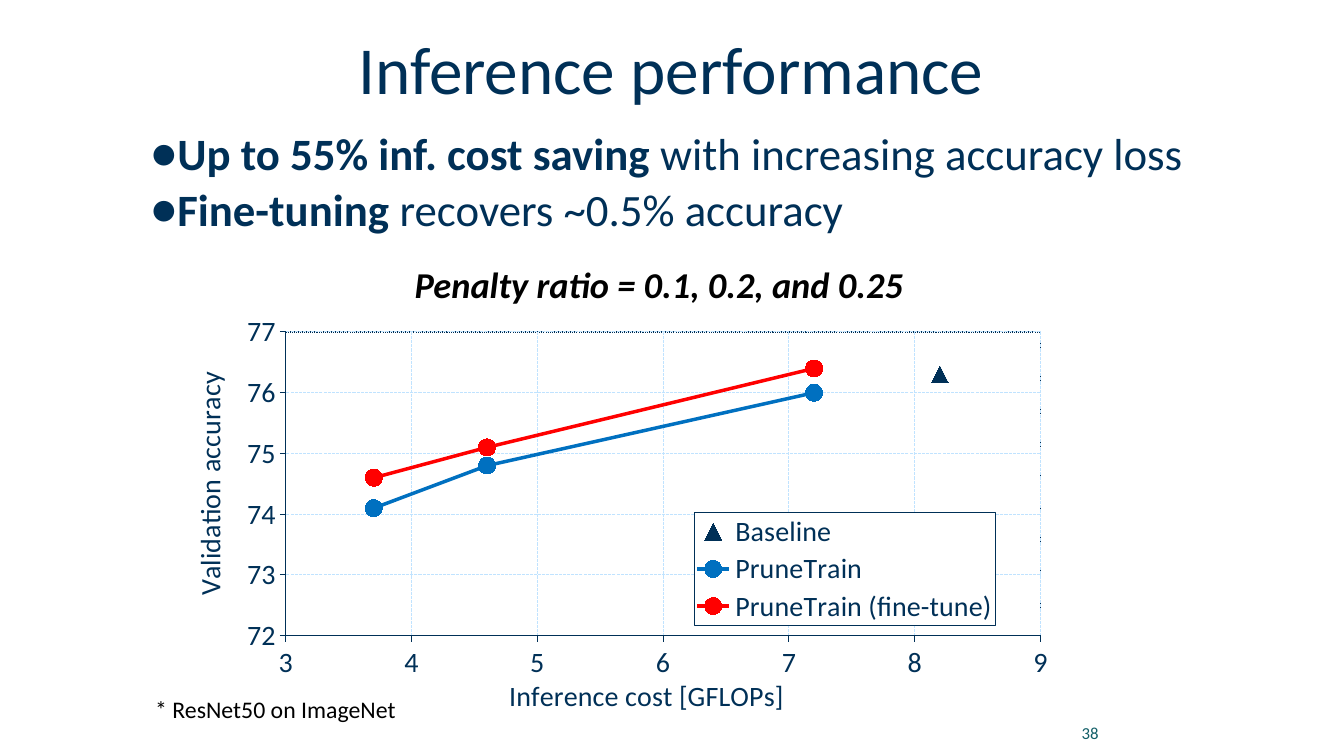
from lxml import etree
from pptx import Presentation
from pptx import util as u
from pptx.chart.data import XyChartData
from pptx.dml.color import RGBColor
from pptx.enum import chart as ec
from pptx.enum import dml, text
from pptx.oxml import parse_xml
from pptx.oxml.ns import nsdecls, qn

COLORS = {
    "navy": "003057",
    "blue": "0070C0",
    "red": "FF0000",
    "grid": "C0E3FF",
    "teal": "115E67",
    "black": "000000",
}
FONT = "Calibri"

BULLETS = [
    [("Up to 55% inf. cost saving", True), (" with increasing accuracy loss", False)],
    [("Fine-tuning ", True), ("recovers ~0.5% accuracy", False)],
]
COSTS = [8.2] + [7.2, 4.6, 3.7] * 2
SERIES = [
    ("Baseline", 0, [76.3], "navy", ec.XL_MARKER_STYLE.TRIANGLE),
    ("PruneTrain", 1, [76.0, 74.8, 74.1], "blue", ec.XL_MARKER_STYLE.CIRCLE),
    ("PruneTrain (fine-tune)", 4, [76.4, 75.1, 74.6], "red", ec.XL_MARKER_STYLE.CIRCLE),
]


def rgb(name):
    return RGBColor.from_string(COLORS[name])


def style_font(font, size, color, bold=False, italic=False):
    font.name, font.size = FONT, u.Pt(size)
    font.bold, font.italic = bold, italic
    font.color.rgb = rgb(color)


def style_line(line, color, width, dash=None):
    line.color.rgb = rgb(color)
    line.width = u.Pt(width)
    if dash:
        line.dash_style = dash


def place(shape, left, top, width, height):
    shape.left, shape.top = u.Cm(left), u.Cm(top)
    shape.width, shape.height = u.Cm(width), u.Cm(height)


def prepare_frame(frame, side, vertical, anchor=text.MSO_ANCHOR.TOP):
    frame.word_wrap = True
    frame.auto_size = text.MSO_AUTO_SIZE.NONE
    frame.vertical_anchor = anchor
    frame.margin_left = frame.margin_right = u.Cm(side)
    frame.margin_top = frame.margin_bottom = u.Cm(vertical)


def set_indent(paragraph, left, hanging=0):
    properties = paragraph._p.get_or_add_pPr()
    properties.set("marL", str(u.Cm(left)))
    properties.set("indent", str(u.Cm(hanging)))
    return properties


def add_title(slide):
    title = slide.shapes.title
    place(title, 3.25, 0.43, 27.33, 2.36)
    prepare_frame(title.text_frame, 0.25, 0.25)
    title.text_frame.text = "Inference performance"
    heading = title.text_frame.paragraphs[0]
    heading.alignment = text.PP_ALIGN.CENTER
    style_font(heading.runs[0].font, 48, "navy")


def add_bullets(slide):
    body = slide.placeholders[1]
    place(body, 3.33, 3.15, 26.87, 3.61)
    frame = body.text_frame
    prepare_frame(frame, 0.18, 0.18)
    for index, parts in enumerate(BULLETS):
        point = frame.add_paragraph() if index else frame.paragraphs[0]
        properties = set_indent(point, 0.94, -0.66)
        color = etree.SubElement(properties, qn("a:buClr"))
        etree.SubElement(color, qn("a:srgbClr")).set("val", COLORS["navy"])
        etree.SubElement(properties, qn("a:buFont")).set("typeface", FONT)
        etree.SubElement(properties, qn("a:buChar")).set("char", "●")
        point.line_spacing = 0.9
        point.space_before = u.Pt(4.9 if index else 0)
        for words, bold in parts:
            run = point.add_run()
            run.text = words
            style_font(run.font, 32, "navy", bold)


def add_label(slide, words, box, size, color, align, bold=False, italic=False):
    label = slide.shapes.add_textbox(*map(u.Cm, box))
    prepare_frame(label.text_frame, 0.18, 0.18)
    label.text_frame.text = words
    line = label.text_frame.paragraphs[0]
    set_indent(line, 0.28)
    line.alignment = align
    line.line_spacing = 0.9
    style_font(line.runs[0].font, size, color, bold, italic)


def add_page_number(slide):
    number = slide.shapes.add_textbox(*map(u.Cm, (24.84, 17.83, 3.1, 1.27)))
    prepare_frame(number.text_frame, 0.25, 0.13, text.MSO_ANCHOR.MIDDLE)
    number.text_frame.text = "38"
    line = number.text_frame.paragraphs[0]
    line.alignment = text.PP_ALIGN.RIGHT
    style_font(line.runs[0].font, 12, "teal")


def set_layout(element, index, inner=False, **fractions):
    for old in element.findall(qn("c:layout")):
        element.remove(old)
    layout = etree.Element(qn("c:layout"))
    manual = etree.SubElement(layout, qn("c:manualLayout"))
    if inner:
        etree.SubElement(manual, qn("c:layoutTarget")).set("val", "inner")
    for side in ("x", "y"):
        etree.SubElement(manual, qn(f"c:{side}Mode")).set("val", "edge")
    for key, value in fractions.items():
        etree.SubElement(manual, qn(f"c:{key}")).set("val", str(value))
    element.insert(index, layout)


def frame_xml(fill, dash):
    return parse_xml(
        f'<c:spPr {nsdecls("c", "a")}>{fill}<a:ln w="9525"><a:solidFill>'
        f'<a:srgbClr val="{COLORS["navy"]}"/></a:solidFill>'
        f'<a:prstDash val="{dash}"/></a:ln></c:spPr>'
    )


def style_axis(axis, title, low, high, number_format, x, y):
    axis.minimum_scale, axis.maximum_scale, axis.major_unit = low, high, 1
    axis.major_tick_mark = ec.XL_TICK_MARK.OUTSIDE
    axis.minor_tick_mark = ec.XL_TICK_MARK.NONE
    axis.tick_labels.number_format = number_format
    axis.tick_labels.number_format_is_linked = False
    style_font(axis.tick_labels.font, 20, "navy")
    style_line(axis.format.line, "navy", 0.75)
    axis.has_major_gridlines = True
    style_line(axis.major_gridlines.format.line, "grid", 0.75, dml.MSO_LINE.SQUARE_DOT)
    caption = axis.axis_title
    caption.text_frame.text = title
    style_font(caption.text_frame.paragraphs[0].runs[0].font, 20, "navy")
    set_layout(caption._element, 1, x=x, y=y)


def style_series(series, color, marker, joined):
    series.smooth = False
    series.marker.style, series.marker.size = marker, 12
    series.marker.format.fill.solid()
    series.marker.format.fill.fore_color.rgb = rgb(color)
    series.marker.format.line.color.rgb = rgb(color)
    if joined:
        style_line(series.format.line, color, 2.5)
    else:
        series.format.line.fill.background()


def accuracy_data():
    data = XyChartData()
    for name, start, accuracies, _, _ in SERIES:
        points = data.add_series(name)
        measured = dict(enumerate(accuracies, start))
        for row, cost in enumerate(COSTS):
            points.add_data_point(cost, measured.get(row))
    return data


def drop_unmeasured(chart_space):
    for point in list(chart_space.iter(qn("c:pt"))):
        if point.findtext(qn("c:v")) in ("None", "", None):
            point.getparent().remove(point)


def add_accuracy_chart(slide):
    box = map(u.Cm, (4.65, 7.9, 22.38, 10.36))
    chart = slide.shapes.add_chart(
        ec.XL_CHART_TYPE.XY_SCATTER_LINES, *box, accuracy_data()).chart
    drop_unmeasured(chart._chartSpace)
    chart.has_title = False
    style_font(chart.font, 20, "navy")
    plot = chart.plots[0]
    plot.vary_by_categories = False
    for series, (_, _, accuracies, color, marker) in zip(plot.series, SERIES):
        style_series(series, color, marker, len(accuracies) > 1)
    style_axis(chart.category_axis, "Inference cost [GFLOPs]", 3, 9, "0", 0.36, 0.87)
    style_axis(chart.value_axis, "Validation accuracy", 72, 77, "#,##0", 0, 0.13)

    plot_area = chart._chartSpace.find(".//" + qn("c:plotArea"))
    set_layout(plot_area, 0, True, x=0.114, y=0.045, w=0.85, h=0.739)
    plot_area.append(frame_xml("<a:noFill/>", "sysDot"))

    chart.has_legend = True
    legend = chart.legend
    legend.position = ec.XL_LEGEND_POSITION.BOTTOM
    legend.include_layout = True
    style_font(legend.font, 20, "navy")
    set_layout(legend._element, 1, x=0.574, y=0.483, w=0.339, h=0.277)
    white = '<a:solidFill><a:srgbClr val="FFFFFF"/></a:solidFill>'
    legend._element.find(qn("c:overlay")).addnext(frame_xml(white, "solid"))


def main():
    deck = Presentation()
    deck.slide_width, deck.slide_height = u.Cm(33.87), u.Cm(19.05)
    slide = deck.slides.add_slide(deck.slide_layouts[1])
    add_page_number(slide)
    add_bullets(slide)
    add_title(slide)
    add_accuracy_chart(slide)
    add_label(slide, "Penalty ratio = 0.1, 0.2, and 0.25", (6.52, 6.55, 19.91, 1.45),
              26, "black", text.PP_ALIGN.CENTER, bold=True, italic=True)
    add_label(slide, "* ResNet50 on ImageNet", (3.45, 17.4, 9.32, 1.12),
              17, "black", text.PP_ALIGN.LEFT)
    deck.save("out.pptx")


if __name__ == "__main__":
    main()
